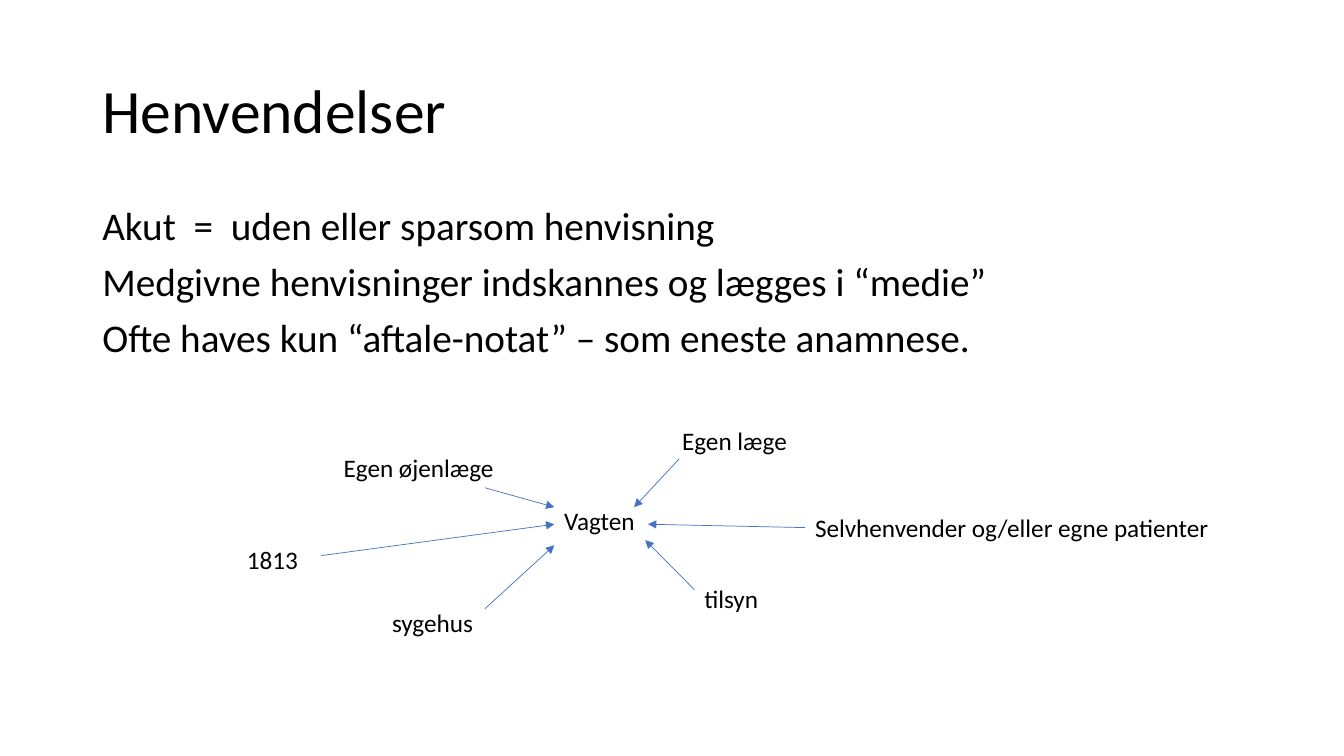
from lxml import etree
from pptx import Presentation
from pptx.dml.color import RGBColor
from pptx.enum.shapes import MSO_CONNECTOR
from pptx.enum.text import MSO_ANCHOR, MSO_AUTO_SIZE
from pptx.oxml.ns import qn
from pptx.util import Cm, Pt

STRAIGHT = MSO_CONNECTOR.STRAIGHT
TOP, MIDDLE = MSO_ANCHOR.TOP, MSO_ANCHOR.MIDDLE
FIT_SHAPE = MSO_AUTO_SIZE.SHAPE_TO_FIT_TEXT
LEFT_SIDE = 1
COLORS = {"text": "000000", "arrow": "4472C4"}
FONT = "Calibri"
LABEL_HEIGHT = 1.03

LABELS = {
    "Vagten": (13.97, 12.6, 2.31),
    "Egen øjenlæge": (8.41, 11.28, 4.34),
    "Egen læge": (16.94, 10.59, 3.18),
    "1813": (5.97, 13.59, 1.8),
    "sygehus": (9.63, 15.19, 2.57),
    "tilsyn": (17.5, 14.58, 1.88),
    "Selvhenvender og/eller egne patienter": (20.29, 12.78, 10.57),
}

ARROWS = {
    "Egen øjenlæge": (12.22, 12.29, 13.97, 12.78),
    "1813": (8.1, 14, 13.97, 13.21),
    "sygehus": (12.22, 15.34, 13.97, 13.74),
    "tilsyn": (17.5, 14.86, 16.26, 13.61),
    "Egen læge": (17.12, 11.56, 15.98, 12.78),
    "Selvhenvender og/eller egne patienter": (20.29, 13.29, 16.33, 13.21),
}


class SlideBuilder:
    def __init__(self, slide):
        self.slide = slide

    def text(self, lines, box, size, anchor=TOP, spacing=None, before=0):
        area = self.slide.shapes.add_textbox(*map(Cm, box))
        frame = area.text_frame
        frame.word_wrap = True
        frame.vertical_anchor = anchor
        frame.text = "\n".join(lines)
        for paragraph in frame.paragraphs:
            paragraph.line_spacing = spacing
            paragraph.space_before = Pt(before)
            paragraph.font.name = FONT
            paragraph.font.size = Pt(size)
            paragraph.font.color.rgb = RGBColor.from_string(COLORS["text"])
        return area

    def label(self, wording, left, top, width):
        area = self.text([wording], (left, top, width, LABEL_HEIGHT), 18)
        area.text_frame.word_wrap = False
        area.text_frame.auto_size = FIT_SHAPE
        return area

    def arrow(self, ends):
        arrow = self.slide.shapes.add_connector(STRAIGHT, *map(Cm, ends))
        arrow.line.color.rgb = RGBColor.from_string(COLORS["arrow"])
        arrow.line.width = Pt(0.5)
        etree.SubElement(arrow.line._get_or_add_ln(), qn("a:tailEnd"), type="triangle")
        etree.SubElement(arrow._element.spPr, qn("a:effectLst"))
        return arrow


def main():
    presentation = Presentation()
    presentation.slide_width = Cm(33.87)
    presentation.slide_height = Cm(19.05)
    builder = SlideBuilder(presentation.slides.add_slide(presentation.slide_layouts[6]))

    builder.text(["Henvendelser"], (2.33, 1.01, 29.21, 3.68), 44, MIDDLE, 0.9)
    builder.text(
        [
            "Akut  =  uden eller sparsom henvisning",
            "Medgivne henvisninger indskannes og lægges i “medie”",
            "Ofte haves kun “aftale-notat” – som eneste anamnese.",
        ],
        (2.33, 5.07, 29.21, 12.09), 28, spacing=0.9, before=10,
    )

    sources = {wording: builder.label(wording, *place) for wording, place in LABELS.items()}
    arrows = {wording: builder.arrow(ends) for wording, ends in ARROWS.items()}
    self_referred = "Selvhenvender og/eller egne patienter"
    arrows[self_referred].begin_connect(sources[self_referred], LEFT_SIDE)

    presentation.save("out.pptx")


if __name__ == "__main__":
    main()
